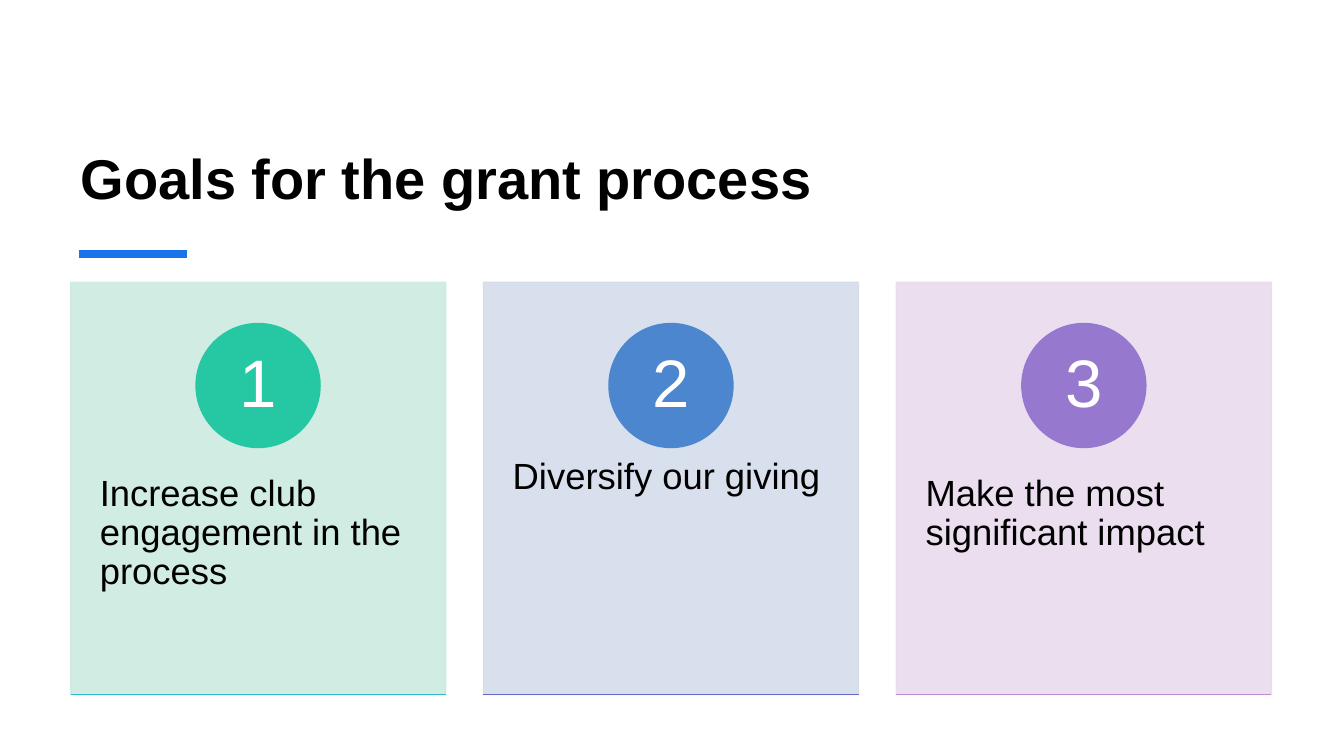
from lxml import etree
from pptx import Presentation
from pptx.dml.color import RGBColor
from pptx.enum.shapes import MSO_CONNECTOR, MSO_SHAPE
from pptx.enum.text import MSO_ANCHOR, PP_ALIGN
from pptx.oxml.ns import qn
from pptx.util import Inches, Pt

FONT = "Arial"
BLACK = RGBColor(0x00, 0x00, 0x00)
WHITE = RGBColor(0xFF, 0xFF, 0xFF)
ACCENT = RGBColor(0x19, 0x73, 0xEB)

# Goal text, panel colour, badge colour, base line colour
GOALS = [
    ("Increase club engagement in the process", RGBColor(0xCD, 0xEB, 0xE0),
     RGBColor(0x25, 0xC8, 0xA2), RGBColor(0x33, 0xB8, 0xD1)),
    ("Diversify our giving", RGBColor(0xD4, 0xDC, 0xEC),
     RGBColor(0x4B, 0x86, 0xCF), RGBColor(0x63, 0x69, 0xCF)),
    ("Make the most significant impact", RGBColor(0xE8, 0xDB, 0xEE),
     RGBColor(0x96, 0x79, 0xCF), RGBColor(0xBF, 0x8E, 0xD1)),
]

MARGIN = Inches(0.7)
CONTENT_WIDTH = Inches(11.91)
CARD_TOP = Inches(2.8)
CARD_WIDTH = Inches(3.72)
CARD_HEIGHT = Inches(4.09)
CARD_STEP = (CONTENT_WIDTH - CARD_WIDTH) // (len(GOALS) - 1)
BADGE_TOP = Inches(3.21)
BADGE_SIZE = Inches(1.23)
NUMBER_SIZE = Inches(0.87)


def format_text(frame, text, size, color, bold=False):
    frame.text = text
    frame.word_wrap = True
    font = frame.paragraphs[0].runs[0].font
    font.name, font.size, font.bold = FONT, Pt(size), bold
    font.color.rgb = color


def add_title(slide, text):
    title = slide.shapes.title
    title.left, title.top = MARGIN, Inches(0.62)
    title.width, title.height = CONTENT_WIDTH, Inches(1.52)
    format_text(title.text_frame, text, 40, BLACK, bold=True)
    title.text_frame.vertical_anchor = MSO_ANCHOR.BOTTOM
    title.text_frame.paragraphs[0].alignment = PP_ALIGN.LEFT


def add_rule(shapes, left, top, width, color, weight):
    rule = shapes.add_connector(MSO_CONNECTOR.STRAIGHT, left, top, left + width, top)
    rule.line.color.rgb = color
    rule.line.width = Pt(weight)
    etree.SubElement(rule.element.spPr, qn("a:effectLst"))


def add_filled(shapes, kind, left, top, width, height, color, opacity=100):
    shape = shapes.add_shape(kind, left, top, width, height)
    shape.shadow.inherit = False
    shape.fill.solid()
    shape.fill.fore_color.rgb = color
    shape.line.color.rgb = color
    shape.line.width = Pt(1)
    if opacity < 100:
        for rgb in shape.element.spPr.iter(qn("a:srgbClr")):
            etree.SubElement(rgb, qn("a:alpha"), val=str(opacity * 1000))


def add_label(shapes, left, top, width, height, text, size, color, inset_x, inset_y):
    frame = shapes.add_textbox(left, top, width, height).text_frame
    format_text(frame, text, size, color)
    frame.margin_left = frame.margin_right = inset_x
    frame.margin_top = frame.margin_bottom = inset_y
    frame.paragraphs[0].line_spacing = 0.9
    return frame


def add_goal_card(slide, index, goal, panel_color, badge_color, base_color):
    shapes = slide.shapes.add_group_shape().shapes
    left = MARGIN + index * CARD_STEP

    # Panel and goal text
    add_filled(shapes, MSO_SHAPE.RECTANGLE, left, CARD_TOP, CARD_WIDTH, CARD_HEIGHT,
               panel_color, opacity=90)
    add_label(shapes, left, Inches(4.35), CARD_WIDTH, Inches(2.45), goal, 26, BLACK,
              Inches(0.29), Inches(0.36))

    # Numbered badge, centred on the panel
    add_filled(shapes, MSO_SHAPE.OVAL, left + (CARD_WIDTH - BADGE_SIZE) // 2, BADGE_TOP,
               BADGE_SIZE, BADGE_SIZE, badge_color)
    number = add_label(shapes, left + (CARD_WIDTH - NUMBER_SIZE) // 2,
                       BADGE_TOP + (BADGE_SIZE - NUMBER_SIZE) // 2,
                       NUMBER_SIZE, NUMBER_SIZE, str(index + 1), 48, WHITE,
                       Inches(0.1), Inches(0.01))
    number.vertical_anchor = MSO_ANCHOR.MIDDLE
    number.paragraphs[0].alignment = PP_ALIGN.CENTER

    # Base line
    add_rule(shapes, left, CARD_TOP + CARD_HEIGHT, CARD_WIDTH, base_color, 1)


def main():
    prs = Presentation()
    prs.slide_width, prs.slide_height = Inches(13.33), Inches(7.5)
    slide = prs.slides.add_slide(prs.slide_layouts[5])

    # Heading
    add_title(slide, "Goals for the grant process")
    add_rule(slide.shapes, Inches(0.78), Inches(2.52), Inches(1.07), ACCENT, 6)

    # Goal cards
    for index, goal in enumerate(GOALS):
        add_goal_card(slide, index, *goal)

    prs.save("out.pptx")


if __name__ == "__main__":
    main()
